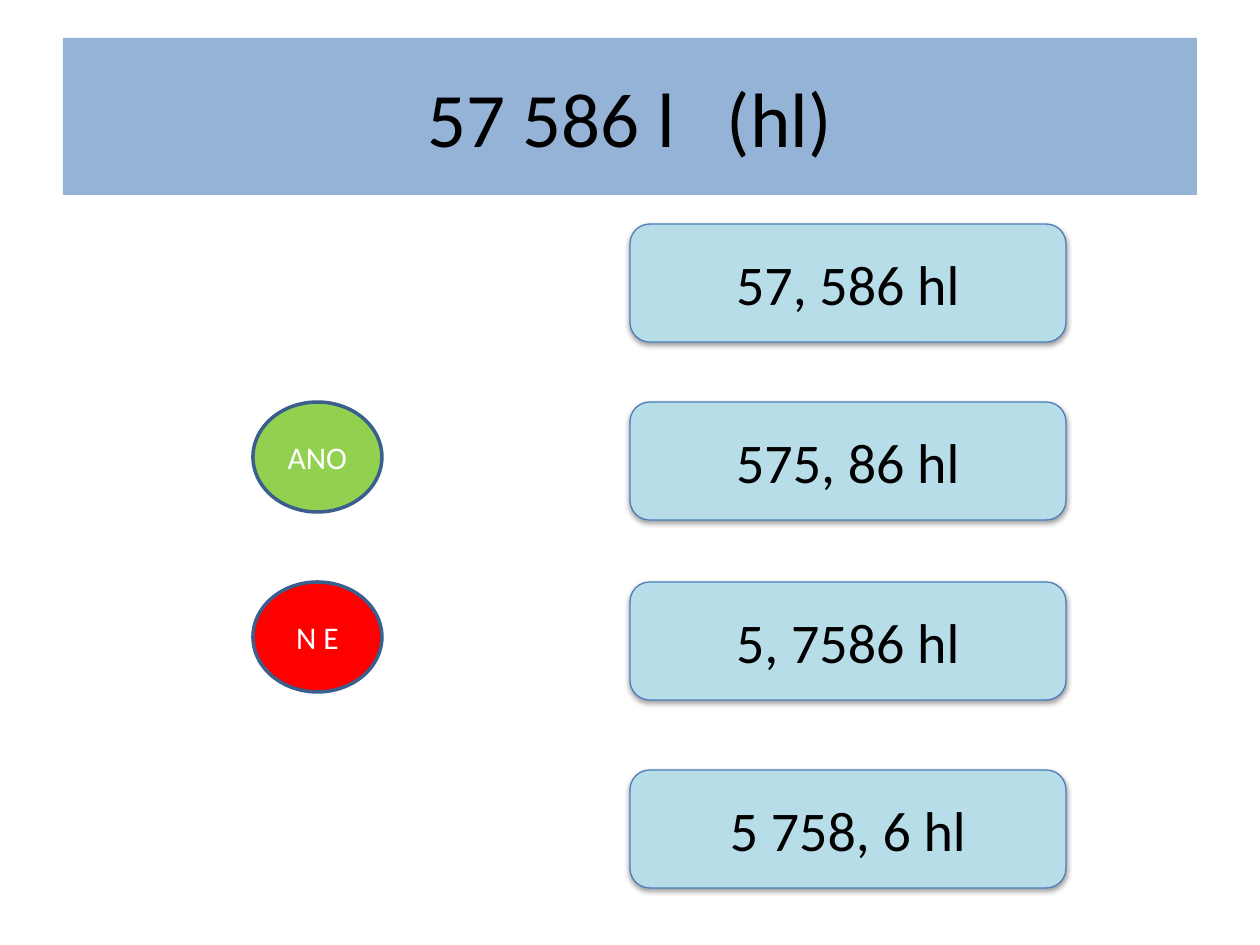
from dataclasses import dataclass

from lxml.etree import SubElement
from pptx import Presentation
from pptx.dml.color import RGBColor
from pptx.enum.shapes import MSO_SHAPE as Preset
from pptx.enum.text import MSO_ANCHOR as Anchor, PP_ALIGN as Align
from pptx.oxml.ns import qn
from pptx.shapes.autoshape import Shape
from pptx.slide import Slide
from pptx.util import Emu, Pt

EMU_PER_PX = 914400 / 126
FONT = "Calibri"
COLORS = {
    "title": "95B3D7",
    "yes": "92D050",
    "no": "FF0000",
    "button_line": "3A5F8C",
    "answer": "B7DEE8",
    "answer_line": "4B7EBC",
    "dark": "000000",
    "light": "FFFFFF",
}


@dataclass(frozen=True)
class Style:
    preset: Preset
    width: int
    height: int
    font_size: int
    text_color: str
    line_color: str | None = None
    line_width: float = 0
    shadow: bool = False


@dataclass(frozen=True)
class Box:
    text: str
    left: int
    top: int
    fill: str
    style: Style


TITLE = Style(Preset.RECTANGLE, 1134, 157, 44, "dark")
BUTTON = Style(Preset.OVAL, 129, 110, 18, "light", "button_line", 2)
ANSWER = Style(Preset.ROUNDED_RECTANGLE, 436, 118, 32, "dark", "answer_line", 0.75, True)

ROW_TOPS = (224, 402, 582, 770)
ANSWERS = ("57, 586 hl", "575, 86 hl", "5, 7586 hl", "5 758, 6 hl")
BUTTONS = (("ANO", "yes"), ("N E", "no"))


def px(length: int) -> Emu:
    return Emu(round(length * EMU_PER_PX))


def color(name: str) -> RGBColor:
    return RGBColor.from_string(COLORS[name])


def add_shadow(shape: Shape) -> None:
    effects = shape._element.spPr.find(qn("a:effectLst"))
    shadow = SubElement(effects, qn("a:outerShdw"), blurRad="40000", dist="20000",
                        dir="5400000", rotWithShape="0")
    shade = SubElement(shadow, qn("a:srgbClr"), val=COLORS["dark"])
    SubElement(shade, qn("a:alpha"), val="38000")


def draw_box(slide: Slide, box: Box) -> None:
    style = box.style
    shape = slide.shapes.add_shape(style.preset, px(box.left), px(box.top),
                                   px(style.width), px(style.height))
    shape.fill.solid()
    shape.fill.fore_color.rgb = color(box.fill)
    if style.line_color:
        shape.line.color.rgb = color(style.line_color)
        shape.line.width = Pt(style.line_width)
    else:
        shape.line.fill.background()
    shape.shadow.inherit = False
    if style.shadow:
        add_shadow(shape)

    frame = shape.text_frame
    frame.word_wrap = True
    frame.vertical_anchor = Anchor.MIDDLE
    paragraph = frame.paragraphs[0]
    paragraph.text = box.text
    paragraph.alignment = Align.CENTER
    paragraph.font.name = FONT
    paragraph.font.size = Pt(style.font_size)
    paragraph.font.color.rgb = color(style.text_color)


def main() -> None:
    presentation = Presentation()
    presentation.slide_width, presentation.slide_height = px(1260), px(945)
    slide = presentation.slides.add_slide(presentation.slide_layouts[6])

    # Title band
    draw_box(slide, Box("57 586 l   (hl)", 63, 38, "title", TITLE))

    # Yes and no buttons, level with the middle answers
    for (text, fill), top in zip(BUTTONS, ROW_TOPS[1:3]):
        draw_box(slide, Box(text, 253, top, fill, BUTTON))

    # Answer choices
    for text, top in zip(ANSWERS, ROW_TOPS):
        draw_box(slide, Box(text, 630, top, "answer", ANSWER))

    presentation.save("out.pptx")


if __name__ == "__main__":
    main()
